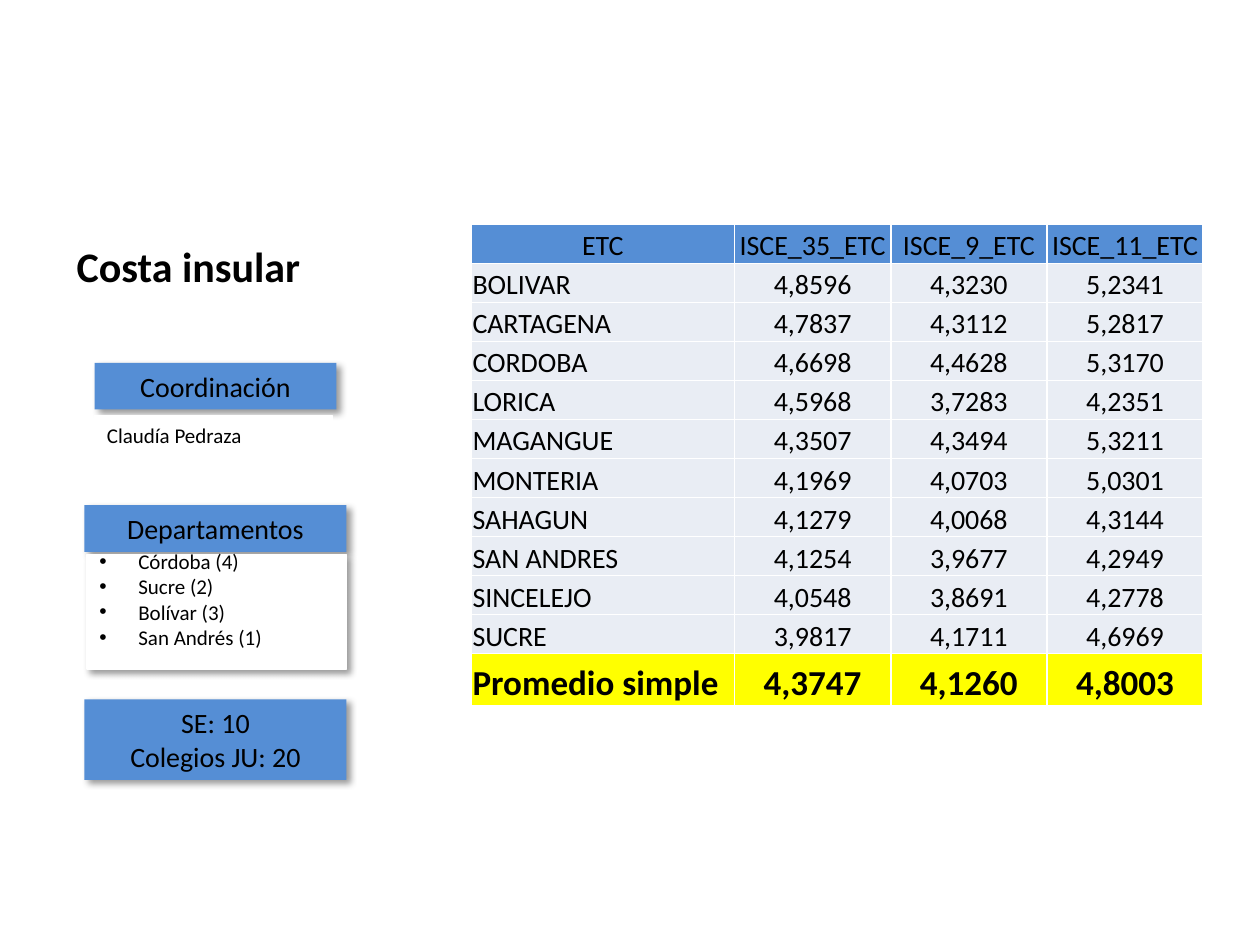
from lxml import etree
from pptx import Presentation
from pptx import util as u
from pptx.dml.color import RGBColor
from pptx.enum import shapes, text
from pptx.oxml import ns

BLACK = RGBColor(0x00, 0x00, 0x00)
WHITE = RGBColor(0xFF, 0xFF, 0xFF)
BLUE = RGBColor(0x55, 0x8E, 0xD5)
PALE = RGBColor(0xE9, 0xED, 0xF4)
YELLOW = RGBColor(0xFF, 0xFF, 0x00)
LEFT, CENTER = text.PP_ALIGN.LEFT, text.PP_ALIGN.CENTER

HEADER = ["ETC", "ISCE_35_ETC", "ISCE_9_ETC", "ISCE_11_ETC"]
SCORES = [
    ["BOLIVAR", "4,8596", "4,3230", "5,2341"],
    ["CARTAGENA", "4,7837", "4,3112", "5,2817"],
    ["CORDOBA", "4,6698", "4,4628", "5,3170"],
    ["LORICA", "4,5968", "3,7283", "4,2351"],
    ["MAGANGUE", "4,3507", "4,3494", "5,3211"],
    ["MONTERIA", "4,1969", "4,0703", "5,0301"],
    ["SAHAGUN", "4,1279", "4,0068", "4,3144"],
    ["SAN ANDRES", "4,1254", "3,9677", "4,2949"],
    ["SINCELEJO", "4,0548", "3,8691", "4,2778"],
    ["SUCRE", "3,9817", "4,1711", "4,6969"],
]
AVERAGE = ["Promedio simple", "4,3747", "4,1260", "4,8003"]


def add(parent, tag, **attrs):
    el = etree.SubElement(parent, ns.qn(tag))
    for name, value in attrs.items():
        el.set(name, str(value))
    return el


class RegionSlide:
    """Draws the elements of a regional summary in one shared style."""

    font = "Calibri"

    def __init__(self, prs):
        self.s = prs.slides.add_slide(prs.slide_layouts[6])

    def fill_text(self, tf, lines, size, align=LEFT, bold=False, bullet=False):
        tf.text = "\n".join(lines)
        for p in tf.paragraphs:
            p.alignment = align
            if bullet:
                pPr = p._p.get_or_add_pPr()
                pPr.set("marL", str(u.Inches(0.31)))
                pPr.set("indent", str(u.Inches(-0.31)))
                add(pPr, "a:buFont", typeface="Arial")
                add(pPr, "a:buChar", char="•")
            for r in p.runs:
                r.font.name, r.font.size = self.font, u.Pt(size)
                r.font.bold, r.font.color.rgb = bold, BLACK

    def title(self, x, y, w, h, words):
        tf = self.s.shapes.add_textbox(*map(u.Inches, (x, y, w, h))).text_frame
        tf.word_wrap = True
        self.fill_text(tf, [words], 24, bold=True)

    def box(self, x, y, w, h, lines, fill=BLUE, size=16, align=CENTER, shadow=True, bullet=False):
        sp = self.s.shapes.add_shape(shapes.MSO_SHAPE.RECTANGLE, *map(u.Inches, (x, y, w, h)))
        sp.fill.solid()
        sp.fill.fore_color.rgb = fill
        if fill == WHITE:
            sp.line.color.rgb, sp.line.width = WHITE, u.Pt(0.75)
        else:
            sp.line.fill.background()
        sp.shadow.inherit = False
        if shadow:
            effects = sp._element.spPr.find(ns.qn("a:effectLst"))
            outer = add(effects, "a:outerShdw", blurRad=u.Pt(4), dist=u.Pt(3),
                        dir=45 * 60000, algn="tl", rotWithShape=0)
            add(add(outer, "a:srgbClr", val=BLACK), "a:alpha", val=40000)
        tf = sp.text_frame
        tf.word_wrap = True
        tf.vertical_anchor = text.MSO_ANCHOR.MIDDLE
        if bullet:
            tf.margin_top, tf.margin_bottom = 0, u.Inches(0.2)
        self.fill_text(tf, lines, size, align, bullet=bullet)

    def cell(self, cell, words, fill, size, align, bold):
        tcPr = cell._tc.get_or_add_tcPr()
        for side in ("a:lnL", "a:lnR", "a:lnT", "a:lnB"):
            ln = add(tcPr, side, w=u.Pt(1))
            add(add(ln, "a:solidFill"), "a:srgbClr", val=WHITE)
        cell.fill.solid()
        cell.fill.fore_color.rgb = fill
        cell.margin_left = cell.margin_right = cell.margin_top = u.Inches(0.01)
        cell.margin_bottom = 0
        cell.vertical_anchor = text.MSO_ANCHOR.BOTTOM
        self.fill_text(cell.text_frame, [words], size, align, bold)

    def table(self, x, y, widths, heights, rows):
        frame = self.s.shapes.add_table(len(rows), len(widths), *map(
            u.Inches, (x, y, sum(widths), sum(heights))))
        tbl = frame.table
        for col, w in zip(tbl.columns, widths):
            col.width = u.Inches(w)
        last = len(rows) - 1
        for i, (row, h) in enumerate(zip(rows, heights)):
            tbl.rows[i].height = u.Inches(h)
            fill = {0: BLUE, last: YELLOW}.get(i, PALE)
            for j, words in enumerate(row):
                align = LEFT if i and j == 0 else CENTER
                self.cell(tbl.cell(i, j), words, fill, 20 if i == last else 16, align, i == last)


def main():
    prs = Presentation()
    prs.slide_width, prs.slide_height = u.Inches(10), u.Inches(7.5)
    s = RegionSlide(prs)
    s.box(0.67, 4.01, 2.08, 0.37, ["Departamentos"])
    s.box(0.69, 4.4, 2.06, 0.91, ["Córdoba (4)", "Sucre (2)", "Bolívar (3)", "San Andrés (1)"],
          fill=WHITE, size=12, align=LEFT, bullet=True)
    s.box(0.67, 5.55, 2.08, 0.64, ["SE: 10", "Colegios JU: 20"])
    s.box(0.75, 2.88, 1.92, 0.37, ["Coordinación"])
    s.box(0.75, 3.3, 1.89, 0.3, ["Claudía Pedraza"], fill=WHITE, size=12, align=LEFT, shadow=False)
    s.title(0.51, 1.86, 3.86, 0.51, "Costa insular")
    s.table(3.74, 1.78, [2.09] + [1.24] * 3, [0.31] * 11 + [0.41], [HEADER, *SCORES, AVERAGE])
    prs.save("out.pptx")


if __name__ == "__main__":
    main()
